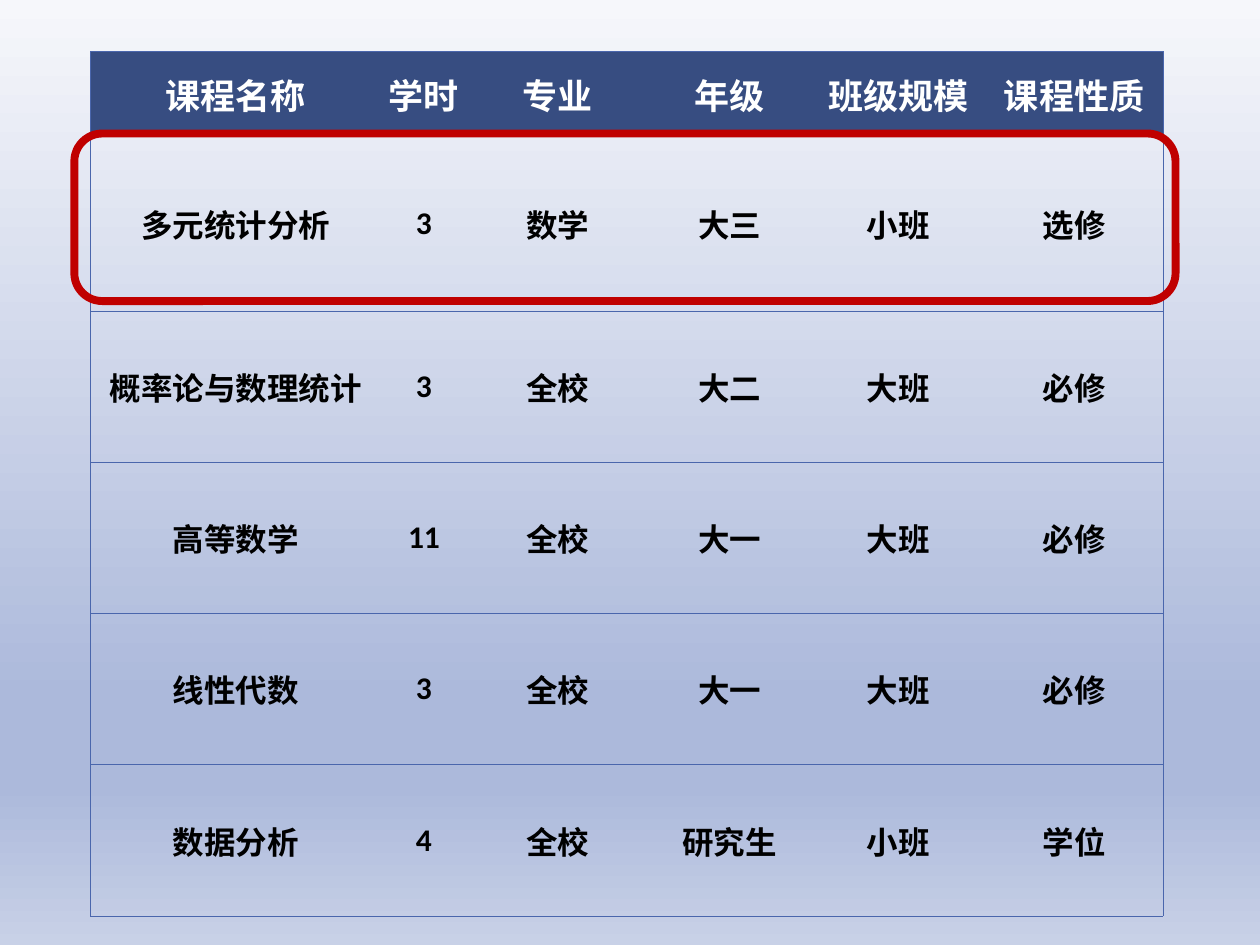
from dataclasses import dataclass

from lxml.etree import SubElement
from pptx import Presentation
from pptx.dml.color import RGBColor
from pptx.enum.shapes import MSO_SHAPE as Preset
from pptx.enum.text import MSO_ANCHOR as Anchor, PP_ALIGN as Align
from pptx.oxml.ns import qn
from pptx.util import Inches, Pt

WIDTH, HEIGHT = Inches(10), Inches(7.5)
FONT = "Calibri"
COLORS = {
    "header": "374D81",
    "border": "4A66AC",
    "highlight": "C00000",
    "header_text": "FFFFFF",
    "body_text": "000000",
}
BACKGROUND_STOPS = [(0, "F6F7FB"), (74, "ACB9DB"), (83, "ACB9DB"), (100, "C8D1E7")]
COLUMN_SHARES = [23, 6.9, 14.3, 13, 13.8, 14.1]
ROW_SHARES = [8.93, 18.53] + [16] * 4


@dataclass
class Box:
    left: float
    top: float
    width: float
    height: float

    def lengths(self) -> tuple:
        return (across(self.left), down(self.top),
                across(self.width), down(self.height))


@dataclass
class Course:
    name: str
    hours: str
    major: str
    grade: str
    class_size: str
    kind: str

    def texts(self) -> list:
        return [self.name, self.hours, self.major,
                self.grade, self.class_size, self.kind]


COURSES = [
    Course("课程名称", "学时", "专业", "年级", "班级规模", "课程性质"),
    Course("多元统计分析", "3", "数学", "大三", "小班", "选修"),
    Course("概率论与数理统计", "3", "全校", "大二", "大班", "必修"),
    Course("高等数学", "11", "全校", "大一", "大班", "必修"),
    Course("线性代数", "3", "全校", "大一", "大班", "必修"),
    Course("数据分析", "4", "全校", "研究生", "小班", "学位"),
]
TABLE_BOX = Box(7.2, 5.47, sum(COLUMN_SHARES), sum(ROW_SHARES))
HIGHLIGHT_BOX = Box(5.9, 14.13, 87.4, 17.73)


def across(share: float) -> int:
    return int(WIDTH * share / 100)


def down(share: float) -> int:
    return int(HEIGHT * share / 100)


def color(name: str) -> RGBColor:
    return RGBColor.from_string(COLORS[name])


def paint_background(slide) -> None:
    fill = slide.background.fill
    fill.gradient()
    gradient = slide.element.find(".//" + qn("a:gradFill"))
    stops = gradient.find(qn("a:gsLst"))
    for stop in list(stops):
        stops.remove(stop)
    for position, value in BACKGROUND_STOPS:
        stop = SubElement(stops, qn("a:gs"), pos=str(position * 1000))
        SubElement(stop, qn("a:srgbClr"), val=value)
    fill.gradient_angle = 270


def draw_borders(cell, visible: dict) -> None:
    properties = cell._tc.get_or_add_tcPr()
    for side, shown in visible.items():
        line = SubElement(properties, qn("a:ln" + side), w=str(Pt(0.5)))
        if shown:
            solid = SubElement(line, qn("a:solidFill"))
            SubElement(solid, qn("a:srgbClr"), val=COLORS["border"])
        else:
            SubElement(line, qn("a:noFill"))


def draw_cell(cell, text: str, is_header: bool, visible: dict) -> None:
    draw_borders(cell, visible)
    if is_header:
        cell.fill.solid()
        cell.fill.fore_color.rgb = color("header")
    else:
        cell.fill.background()
    cell.margin_left = cell.margin_right = cell.margin_top = cell.margin_bottom = 0
    cell.vertical_anchor = Anchor.MIDDLE
    paragraph = cell.text_frame.paragraphs[0]
    paragraph.alignment = Align.CENTER
    run = paragraph.add_run()
    run.text = text
    run.font.name = FONT
    run.font.bold = True
    run.font.size = Pt(20 if is_header else 18)
    run.font.color.rgb = color("header_text" if is_header else "body_text")


def draw_courses(slide, courses: list, box: Box) -> None:
    last = len(COLUMN_SHARES) - 1
    table = slide.shapes.add_table(len(courses), last + 1, *box.lengths()).table
    table.horz_banding = False
    for column, share in zip(table.columns, COLUMN_SHARES):
        column.width = across(share)
    for row, share in zip(table.rows, ROW_SHARES):
        row.height = down(share)
    for row_index, course in enumerate(courses):
        for column_index, text in enumerate(course.texts()):
            visible = {"L": column_index == 0, "R": column_index == last,
                       "T": True, "B": True}
            draw_cell(table.cell(row_index, column_index), text,
                      row_index == 0, visible)


def draw_highlight(slide, box: Box) -> None:
    shape = slide.shapes.add_shape(Preset.ROUNDED_RECTANGLE, *box.lengths())
    shape.shadow.inherit = False
    shape.fill.background()
    shape.line.color.rgb = color("highlight")
    shape.line.width = Pt(4.5)


def main() -> None:
    presentation = Presentation()
    presentation.slide_width, presentation.slide_height = WIDTH, HEIGHT
    slide = presentation.slides.add_slide(presentation.slide_layouts[6])
    paint_background(slide)
    draw_courses(slide, COURSES, TABLE_BOX)
    draw_highlight(slide, HIGHLIGHT_BOX)
    presentation.save("out.pptx")


if __name__ == "__main__":
    main()
